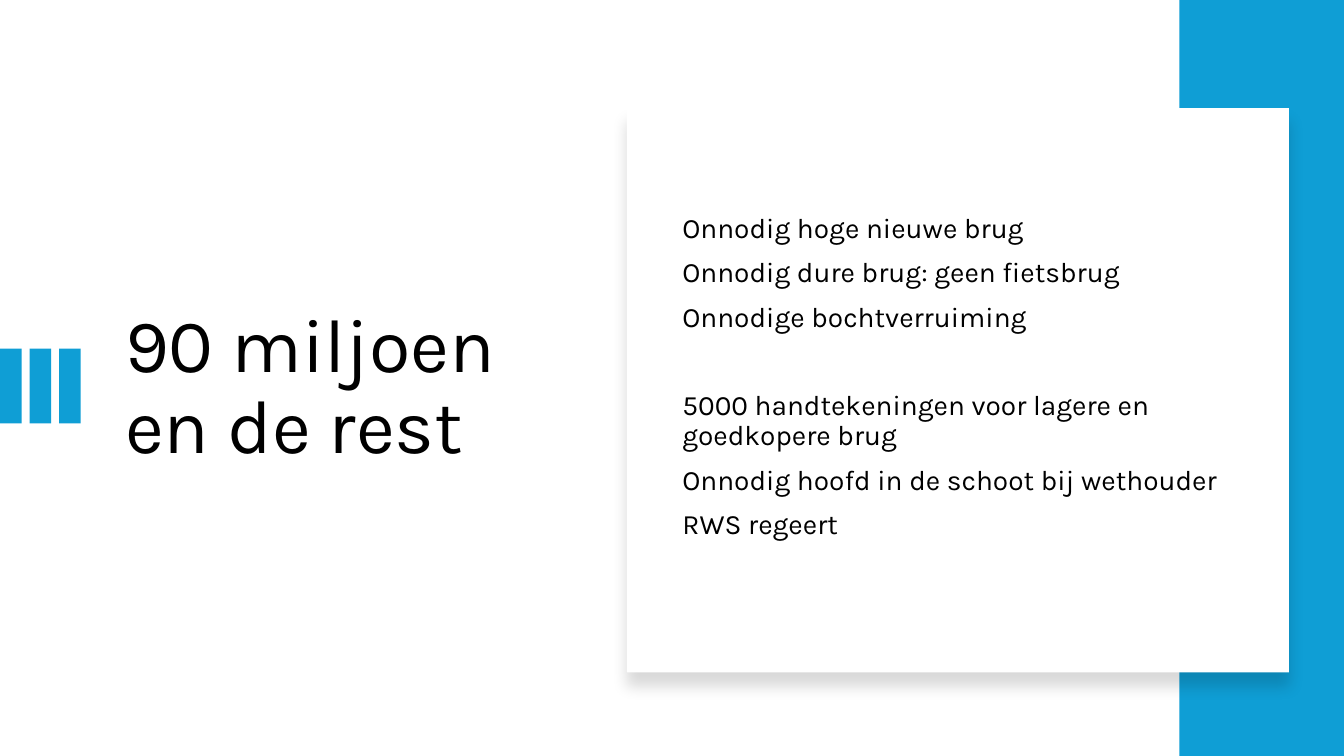
from lxml.etree import SubElement
from pptx import Presentation
from pptx.dml.color import RGBColor
from pptx.enum.shapes import MSO_SHAPE
from pptx.enum.text import MSO_ANCHOR, MSO_AUTO_SIZE, PP_ALIGN
from pptx.oxml.ns import qn
from pptx.util import Pt

BLUE = RGBColor(0x0F, 0x9E, 0xD5)
WHITE = RGBColor(0xFF, 0xFF, 0xFF)
BLACK = RGBColor(0x00, 0x00, 0x00)

POINTS = [
    ("Onnodig hoge nieuwe brug", 0),
    ("Onnodig dure brug: geen fietsbrug", 10),
    ("Onnodige bochtverruiming", 10),
    ("5000 handtekeningen voor lagere en goedkopere brug", 41.7),
    ("Onnodig hoofd in de schoot bij wethouder", 10),
    ("RWS regeert", 10),
]


def write_paragraph(paragraph, text, size, font="Karla", color=BLACK, before=0):
    """Fill a paragraph with plain left-aligned text without a bullet."""
    properties = paragraph._p.get_or_add_pPr()
    properties.set("marL", "0")
    properties.set("indent", "0")
    SubElement(properties, qn("a:buNone"))
    paragraph.alignment = PP_ALIGN.LEFT
    paragraph.line_spacing = 0.9
    paragraph.space_before = Pt(before)
    run = paragraph.add_run()
    run.text = text
    run.font.name = font
    run.font.size = Pt(size)
    run.font.color.rgb = color


class SlideBuilder:
    """Hold the current slide and draw its elements in one style."""

    def __init__(self, slide):
        """Keep the slide to draw on."""
        self.slide = slide

    def rectangle(self, left, top, width, height, color=BLUE, parent=None):
        """Draw a filled rectangle without outline or shadow."""
        shapes = (parent or self.slide).shapes
        shape = shapes.add_shape(
            MSO_SHAPE.RECTANGLE, Pt(left), Pt(top), Pt(width), Pt(height))
        shape.shadow.inherit = False
        shape.fill.solid()
        shape.fill.fore_color.rgb = color
        shape.line.fill.background()
        return shape

    def stripes(self, count, top, width, height, pitch):
        """Draw a group of evenly spaced upright bars at the left edge."""
        group = self.slide.shapes.add_group_shape()
        for index in range(count):
            self.rectangle(index * pitch, top, width, height, parent=group)

    def card(self, left, top, width, height):
        """Draw a white panel with a soft shadow below it."""
        shape = self.rectangle(left, top, width, height, WHITE)
        effects = shape._element.spPr.find(qn("a:effectLst"))
        shadow = SubElement(
            effects, qn("a:outerShdw"), blurRad=str(Pt(11)), dist=str(Pt(10)),
            dir="5400000", algn="t", rotWithShape="0")
        shade = SubElement(shadow, qn("a:srgbClr"), val=str(BLACK))
        SubElement(shade, qn("a:alpha"), val="15000")

    def placeholder(self, shape, left, top, width, height, lines, size, bottom=3.6):
        """Move a placeholder to the front and fill it with (text, space before) lines."""
        self.slide.shapes._spTree.append(shape._element)
        shape.left, shape.top = Pt(left), Pt(top)
        shape.width, shape.height = Pt(width), Pt(height)
        frame = shape.text_frame
        frame.word_wrap = True
        frame.auto_size = MSO_AUTO_SIZE.NONE
        frame.vertical_anchor = MSO_ANCHOR.MIDDLE
        frame.margin_bottom = Pt(bottom)
        for index, (text, before) in enumerate(lines):
            paragraph = frame.add_paragraph() if index else frame.paragraphs[0]
            write_paragraph(paragraph, text, size, before=before)


def main():
    """Build the slide and save it."""
    presentation = Presentation()
    presentation.slide_width, presentation.slide_height = Pt(960), Pt(540)
    slide = presentation.slides.add_slide(presentation.slide_layouts[1])
    builder = SlideBuilder(slide)
    title, body = slide.placeholders
    builder.placeholder(
        title, 82.1, 105.1, 306.7, 344.9, [("90 miljoen en de rest", 0)], 54)
    builder.stripes(3, top=249.1, width=15.4, height=53.3, pitch=21.1)
    builder.rectangle(842.4, 0, 117.6, 540)
    builder.card(447.8, 77.2, 473, 403.2)
    builder.placeholder(body, 480.2, 105.1, 414, 344.9, POINTS, 20, bottom=19.6)
    presentation.save("out.pptx")


if __name__ == "__main__":
    main()
